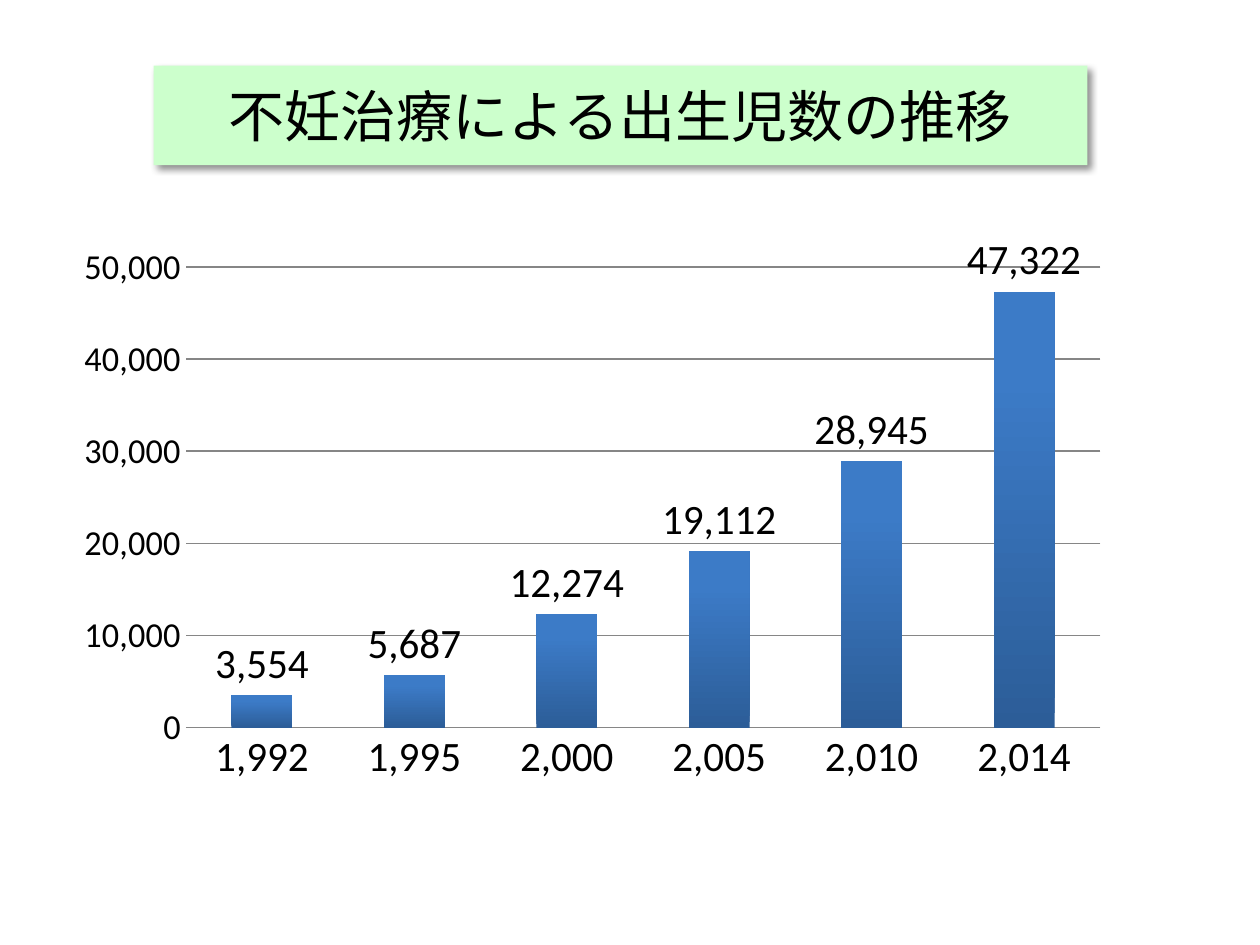
from lxml.etree import SubElement
from pptx import Presentation
from pptx.chart.data import CategoryChartData
from pptx.dml.color import RGBColor
from pptx.enum.chart import XL_CHART_TYPE, XL_LABEL_POSITION, XL_TICK_MARK
from pptx.enum.text import MSO_ANCHOR, PP_ALIGN
from pptx.oxml import parse_xml
from pptx.oxml.ns import nsdecls, qn
from pptx.util import Pt

COLOURS = {
    "text": "000000",
    "title_fill": "CCFFCC",
    "shadow": "000000",
    "grid": "868686",
    "bar_bottom": "2C5D98",
    "bar_top": "3C7BC7",
}
TITLE_FONT = "Noto Sans CJK JP"
CHART_FONT = "Calibri"
NUMBER_FORMAT = r"#,##0;[Red]\-#,##0"
BIRTHS = {
    "1,992": 3554,
    "1,995": 5687,
    "2,000": 12274,
    "2,005": 19112,
    "2,010": 28945,
    "2,014": 47322,
}
PLOT_AREA = {"x": 0.077, "y": 0.053, "w": 0.901, "h": 0.826}


def colour(name):
    return RGBColor.from_string(COLOURS[name])


def format_font(font, size, name=CHART_FONT):
    font.size = Pt(size)
    font.name = name
    font.bold = False
    font.color.rgb = colour("text")


def write_text(frame, text, size, font, align=PP_ALIGN.CENTER, anchor=MSO_ANCHOR.MIDDLE):
    frame.word_wrap = True
    frame.vertical_anchor = anchor
    para = frame.paragraphs[0]
    para.alignment = align
    span = para.add_run()
    span.text = text
    format_font(span.font, size, font)
    SubElement(span.font._element, qn("a:ea")).set("typeface", font)


def add_shadow(box):
    box._element.spPr.append(parse_xml(
        f'<a:effectLst {nsdecls("a")}>'
        f'<a:outerShdw blurRad="{Pt(4)}" dist="{Pt(3)}" dir="2700000" algn="tl" rotWithShape="0">'
        f'<a:srgbClr val="{COLOURS["shadow"]}"><a:alpha val="43000"/></a:srgbClr>'
        '</a:outerShdw></a:effectLst>'))


def place_title(page, text):
    box = page.shapes.title
    box.left, box.top, box.width, box.height = Pt(87.84), Pt(37.44), Pt(533.52), Pt(56.88)
    box.fill.solid()
    box.fill.fore_color.rgb = colour("title_fill")
    add_shadow(box)
    write_text(box.text_frame, text, size=32, font=TITLE_FONT)


def set_plot_layout(chart):
    """Fix the inner plot area as fractions of the chart."""
    plot_area = chart._chartSpace.chart.plotArea
    for layout in plot_area.findall(qn("c:layout")):
        plot_area.remove(layout)
    modes = "".join(f'<c:{side}Mode val="edge"/>' for side in "xy")
    sizes = "".join(f'<c:{key} val="{value}"/>' for key, value in PLOT_AREA.items())
    plot_area.insert(0, parse_xml(
        f'<c:layout {nsdecls("c")}><c:manualLayout><c:layoutTarget val="inner"/>'
        f'{modes}{sizes}</c:manualLayout></c:layout>'))


def format_line(line):
    line.color.rgb = colour("grid")
    line.width = Pt(0.75)


def format_axes(chart):
    for axis, size in ((chart.category_axis, 24), (chart.value_axis, 20)):
        axis.major_tick_mark = axis.minor_tick_mark = XL_TICK_MARK.NONE
        format_font(axis.tick_labels.font, size)
    format_line(chart.category_axis.format.line)

    values = chart.value_axis
    values.minimum_scale, values.maximum_scale, values.major_unit = 0, 50000, 10000
    values.tick_labels.number_format = NUMBER_FORMAT
    values.tick_labels.number_format_is_linked = False
    values.format.line.fill.background()
    values.has_major_gridlines = True
    format_line(values.major_gridlines.format.line)


def format_bars(plot):
    plot.gap_width = 150
    plot.vary_by_categories = False
    series = plot.series[0]
    series.invert_if_negative = False
    fill = series.format.fill
    fill.gradient()
    fill.gradient_angle = 90
    stops = zip(fill.gradient_stops, ("bar_bottom", "bar_top"), (0, 0.8))
    for stop, name, position in stops:
        stop.color.rgb = colour(name)
        stop.position = position

    labels = series.data_labels
    labels.show_value = True
    labels.position = XL_LABEL_POSITION.OUTSIDE_END
    labels.number_format = NUMBER_FORMAT
    labels.number_format_is_linked = False
    format_font(labels.font, 24)


def add_births_chart(page):
    data = CategoryChartData()
    data.categories = list(BIRTHS)
    data.add_series("Series 1", list(BIRTHS.values()))
    chart = page.shapes.add_chart(
        XL_CHART_TYPE.COLUMN_CLUSTERED,
        Pt(48.24), Pt(134.64), Pt(593.28), Pt(319.68), data).chart
    chart.has_title = False
    chart.has_legend = False
    format_font(chart.font, 18)
    set_plot_layout(chart)
    format_axes(chart)
    format_bars(chart.plots[0])


def main():
    deck = Presentation()
    deck.slide_width, deck.slide_height = Pt(720), Pt(540)
    page = deck.slides.add_slide(deck.slide_layouts.get_by_name("Title Only"))
    place_title(page, "不妊治療による出生児数の推移")
    add_births_chart(page)
    deck.save("out.pptx")


if __name__ == "__main__":
    main()
